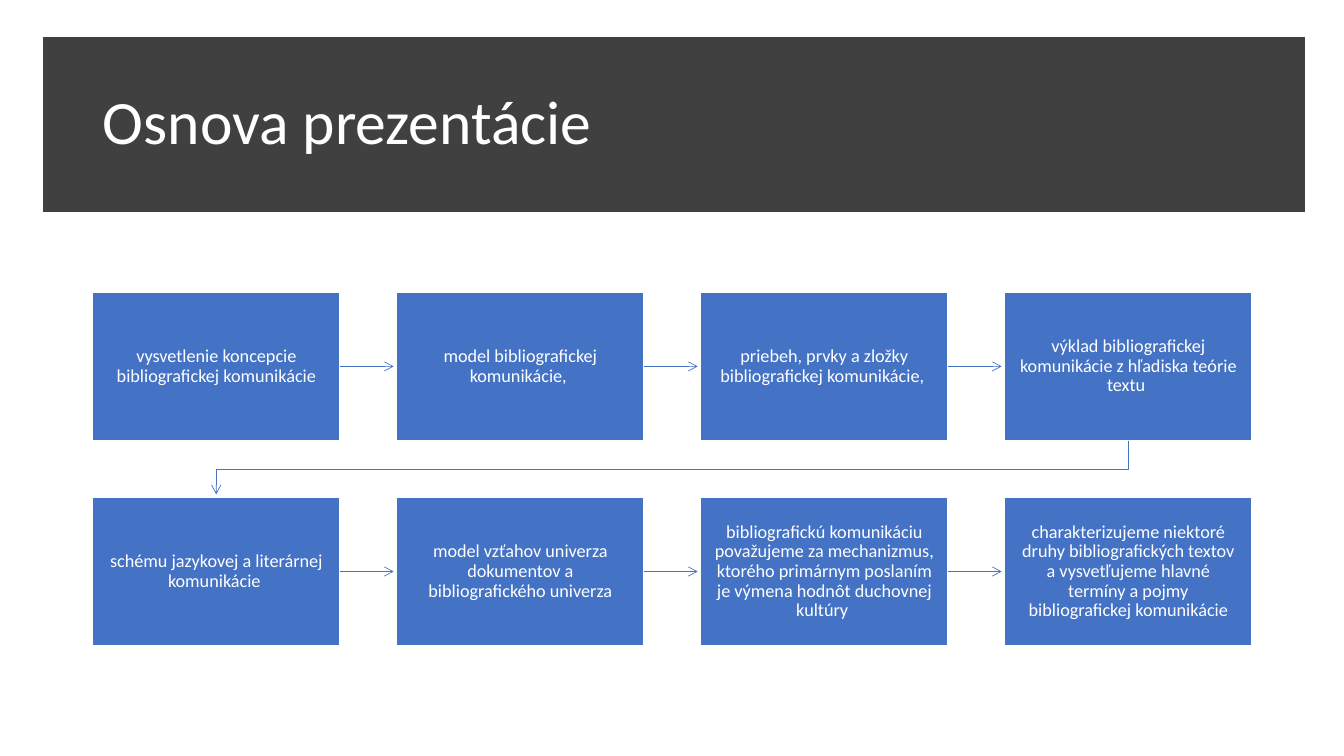
import pptx
import pptx.util
import pptx.dml.color
import pptx.enum.shapes
import pptx.enum.text
import pptx.oxml
import pptx.oxml.ns

Inches = pptx.util.Inches
Pt = pptx.util.Pt
RGBColor = pptx.dml.color.RGBColor
Rect = pptx.enum.shapes.MSO_SHAPE.RECTANGLE
Straight = pptx.enum.shapes.MSO_CONNECTOR.STRAIGHT
Align = pptx.enum.text.PP_ALIGN

DARK = RGBColor(0x40, 0x40, 0x40)
BLUE = RGBColor(0x44, 0x72, 0xC4)
WHITE = RGBColor(0xFF, 0xFF, 0xFF)

LEFT, TOP = 0.92, 2.9
WIDE, HIGH = 2.45, 1.47
STEP_X, STEP_Y = 3.015, 2.035
GAP = 0.03
COLS = 4

steps = [
    "vysvetlenie koncepcie bibliografickej komunikácie",
    "model bibliografickej komunikácie, ",
    "priebeh, prvky a zložky bibliografickej komunikácie, ",
    "výklad bibliografickej komunikácie z hľadiska teórie textu ",
    "schému jazykovej a literárnej komunikácie ",
    "model vzťahov univerza dokumentov a bibliografického univerza",
    "bibliografickú komunikáciu považujeme za mechanizmus, "
    "ktorého primárnym poslaním je výmena hodnôt duchovnej kultúry ",
    "charakterizujeme niektoré druhy bibliografických textov "
    "a vysvetľujeme hlavné termíny a pojmy bibliografickej komunikácie",
]


def write(shape, text, size, align, inset):
    frame = shape.text_frame
    frame.text = text
    form = {
        "word_wrap": True,
        "auto_size": pptx.enum.text.MSO_AUTO_SIZE.NONE,
        "vertical_anchor": pptx.enum.text.MSO_ANCHOR.MIDDLE,
        "margin_left": Inches(inset[0]),
        "margin_right": Inches(inset[0]),
        "margin_top": Inches(inset[1]),
        "margin_bottom": Inches(inset[1]),
    }
    for name, value in form.items():
        setattr(frame, name, value)
    para = frame.paragraphs[0]
    para.alignment = align
    para.line_spacing = 0.9
    para.font.color.rgb = WHITE
    for name, value in {"size": Pt(size), "name": "Calibri"}.items():
        setattr(para.font, name, value)


def arrow(shape):
    shape.line.color.rgb = BLUE
    shape.line.width = Pt(0.5)
    ends = pptx.oxml.parse_xml(
        f'<a:tailEnd {pptx.oxml.ns.nsdecls("a")} type="arrow"/>')
    shape.line._get_or_add_ln().append(ends)
    props = shape._element.spPr
    if props.find(pptx.oxml.ns.qn("a:effectLst")) is None:
        props.append(pptx.oxml.parse_xml(
            f'<a:effectLst {pptx.oxml.ns.nsdecls("a")}/>'))


deck = pptx.Presentation()
deck.slide_width = Inches(13.33)
deck.slide_height = Inches(7.5)
slide = deck.slides.add_slide(deck.slide_layouts[5])
shapes = slide.shapes

title = shapes.title
place = {"left": 0.92, "top": 0.51, "width": 11.5, "height": 1.45}
for name, value in place.items():
    setattr(title, name, Inches(value))
write(title, "Osnova prezentácie", 44, Align.LEFT, (0.1, 0.05))

band = shapes.add_shape(
    Rect, Inches(0.43), Inches(0.37), Inches(12.51), Inches(1.73))
band.shadow.inherit = False
band.fill.solid()
band.fill.fore_color.rgb = DARK
band.line.color.rgb = DARK
band.line.width = Pt(1)
title._element.addprevious(band._element)

for index, text in enumerate(steps):
    row, col = divmod(index, COLS)
    x = LEFT + col * STEP_X
    y = TOP + row * STEP_Y
    box = shapes.add_shape(
        Rect, Inches(x), Inches(y), Inches(WIDE), Inches(HIGH))
    box.shadow.inherit = False
    box.fill.solid()
    box.fill.fore_color.rgb = BLUE
    box.line.color.rgb = WHITE
    box.line.width = Pt(1)
    write(box, text, 13, Align.CENTER, (0.12, 0.13))
    if col < COLS - 1:
        mid = Inches(y + HIGH / 2)
        link = shapes.add_connector(
            Straight, Inches(x + WIDE), mid, Inches(x + STEP_X - GAP), mid)
        link.begin_connect(box, 3)
        arrow(link)

first = LEFT + WIDE / 2
last = first + (COLS - 1) * STEP_X
bend = TOP + (HIGH + STEP_Y) / 2
turn = [(last, bend), (first, bend), (first, TOP + STEP_Y - GAP)]
pen = shapes.build_freeform(Inches(last), Inches(TOP + HIGH))
pen.add_line_segments([(Inches(x), Inches(y)) for x, y in turn], close=False)
wrap = pen.convert_to_shape()
wrap.shadow.inherit = False
wrap.fill.background()
arrow(wrap)

deck.save("out.pptx")
